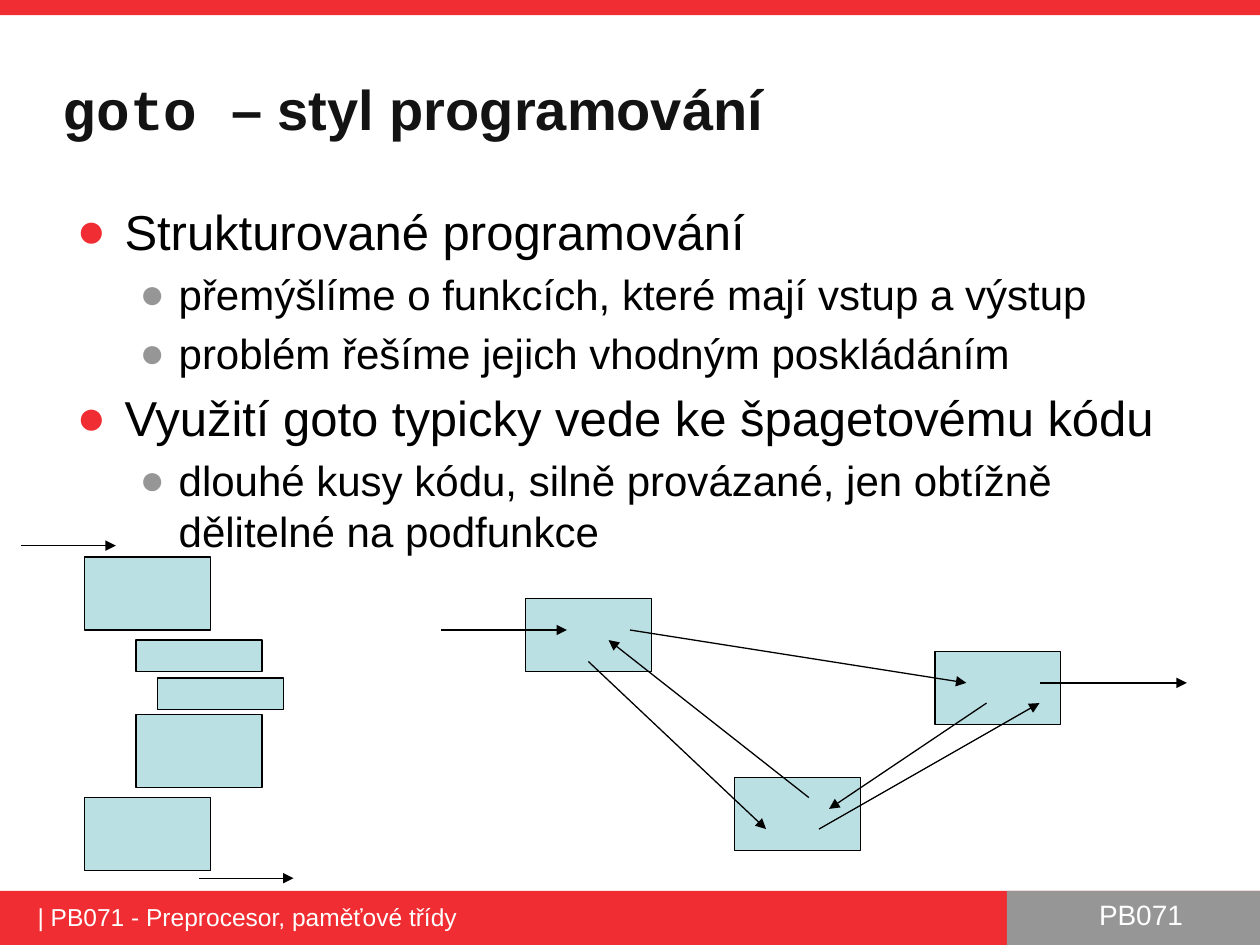
from dataclasses import dataclass
from lxml.etree import SubElement
from pptx import Presentation
from pptx.dml.color import RGBColor
from pptx.enum.shapes import MSO_CONNECTOR, MSO_SHAPE
from pptx.enum.text import MSO_ANCHOR, PP_ALIGN
from pptx.oxml.ns import qn
from pptx.slide import Slide
from pptx.util import Inches, Pt


def color(hex_value):
    return RGBColor.from_string(hex_value)


@dataclass
class Style:
    page: Slide
    red: str = "F02D32"
    gray: str = "969696"
    block_fill: str = "BBE0E3"
    black: str = "000000"
    white: str = "FFFFFF"
    font: str = "Arial"
    code_font: str = "Courier New"

    def format_span(self, span, size, hex_value, font=None, bold=False):
        span.font.name = font or self.font
        span.font.size = Pt(size)
        span.font.bold = bold
        span.font.color.rgb = color(hex_value)

    def box(self, left, top, width, height, fill, outlined=False):
        box = self.page.shapes.add_shape(
            MSO_SHAPE.RECTANGLE, Inches(left), Inches(top), Inches(width), Inches(height)
        )
        box.shadow.inherit = False
        box.fill.solid()
        box.fill.fore_color.rgb = color(fill)
        if outlined:
            box.line.color.rgb = color(self.black)
            box.line.width = Pt(0.75)
        else:
            box.line.fill.background()

    def code_block(self, left, top, height=0.58):
        self.box(left, top, 1, height, self.block_fill, outlined=True)

    def frame(self, left, top, width, height, margins=True):
        box = self.page.shapes.add_textbox(
            Inches(left), Inches(top), Inches(width), Inches(height)
        )
        frame = box.text_frame
        frame.word_wrap = True
        if not margins:
            frame.margin_left = frame.margin_right = 0
            frame.margin_top = frame.margin_bottom = 0
        return frame

    def label(self, text, left, top, width, height, size, align, margins=True):
        frame = self.frame(left, top, width, height, margins)
        frame.text = text
        para = frame.paragraphs[0]
        para.alignment = align
        self.format_span(para.runs[0], size, self.white)

    def title(self, code, text):
        frame = self.frame(0.5, 0.3, 9.3, 1.09, margins=False)
        frame.vertical_anchor = MSO_ANCHOR.MIDDLE
        para = frame.paragraphs[0]
        para.line_spacing = Pt(40)
        for words, font in ((code, self.code_font), (text, self.font)):
            span = para.add_run()
            span.text = words
            self.format_span(span, 32, "131313", font, bold=True)

    def bullets(self, items):
        frame = self.frame(0.51, 1.55, 9.21, 5.28)
        levels = ((28, self.red, 0.38, 0.38), (24, self.gray, 0.81, 0.31))
        for index, (level, text) in enumerate(items):
            size, bullet_color, indent, hanging = levels[level]
            para = frame.add_paragraph() if index else frame.paragraphs[0]
            para.text = text
            para.level = level
            para.space_before = Pt(size * 0.2)
            self.format_span(para.runs[0], size, self.black)
            properties = para._p.get_or_add_pPr()
            properties.set("marL", str(Inches(indent)))
            properties.set("indent", str(-Inches(hanging)))
            bullet = SubElement(properties, qn("a:buClr"))
            SubElement(bullet, qn("a:srgbClr"), val=bullet_color)
            SubElement(properties, qn("a:buFont"), typeface=self.font)
            SubElement(properties, qn("a:buChar"), char="●")

    def arrow(self, start, end):
        arrow = self.page.shapes.add_connector(
            MSO_CONNECTOR.STRAIGHT, *(Inches(value) for value in start + end)
        )
        arrow.line.color.rgb = color(self.black)
        arrow.line.width = Pt(0.75)
        SubElement(arrow.line._get_or_add_ln(), qn("a:tailEnd"), type="triangle")
        SubElement(arrow._element.spPr, qn("a:effectLst"))


def main():
    deck = Presentation()
    deck.slide_width, deck.slide_height = Inches(10), Inches(7.5)
    style = Style(deck.slides.add_slide(deck.slide_layouts[6]))

    style.box(0, 0, 10, 0.12, style.red)
    style.box(0, 7.07, 10, 0.43, style.red)
    style.box(7.99, 7.07, 2.01, 0.43, style.gray)
    style.label("PB071", 8.15, 7.12, 1.81, 0.27, 16, PP_ALIGN.CENTER, margins=False)
    style.label("| PB071 - Preprocesor, paměťové třídy",
                0.2, 7.11, 7.8, 0.52, 14, PP_ALIGN.LEFT)
    style.title("goto ", "– styl programování")
    style.bullets([
        (0, "Strukturované programování"),
        (1, "přemýšlíme o funkcích, které mají vstup a výstup"),
        (1, "problém řešíme jejich vhodným poskládáním"),
        (0, "Využití goto typicky vede ke špagetovému kódu"),
        (1, "dlouhé kusy kódu, silně provázané, jen obtížně dělitelné na podfunkce"),
    ])

    structured_blocks = [(0.67, 4.42), (1.08, 5.08, 0.25), (1.25, 5.38, 0.25),
                         (1.08, 5.67), (0.67, 6.33)]
    spaghetti_blocks = [(4.17, 4.75), (7.42, 5.17), (5.83, 6.17)]
    for block in structured_blocks + spaghetti_blocks:
        style.code_block(*block)

    structured_flow = [((0.17, 4.33), (0.92, 4.33)), ((1.58, 6.97), (2.33, 6.97))]
    spaghetti_flow = [
        ((3.5, 5), (4.5, 5)),
        ((5, 5), (7.67, 5.42)),
        ((7.83, 5.58), (6.58, 6.42)),
        ((6.42, 6.33), (4.83, 5.08)),
        ((4.67, 5.25), (6.08, 6.58)),
        ((6.5, 6.58), (8.25, 5.58)),
        ((8.25, 5.42), (9.42, 5.42)),
    ]
    for start, end in structured_flow + spaghetti_flow:
        style.arrow(start, end)

    deck.save("out.pptx")


if __name__ == "__main__":
    main()
